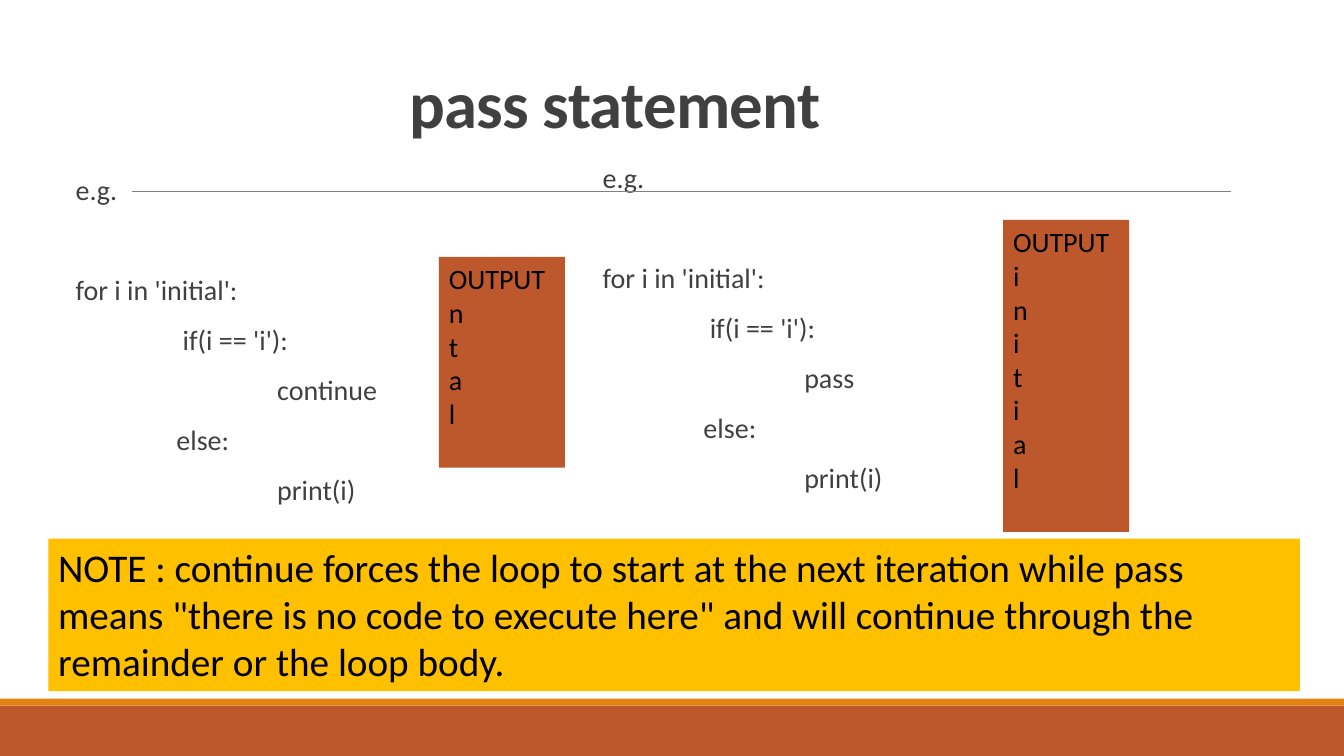
import dataclasses
import typing

import lxml.etree
import pptx
import pptx.dml.color
import pptx.enum.shapes
import pptx.enum.text
import pptx.oxml.ns
import pptx.util

Pt = pptx.util.Pt
FONT = "Calibri"
TAB = 72
COLORS = {
    "rust": "BD582C",
    "orange": "E48312",
    "amber": "FFC000",
    "rule": "808080",
    "heading": "404040",
    "black": "000000",
}


@dataclasses.dataclass(frozen=True)
class Frame:
    left: float
    top: float
    width: float
    height: float


@dataclasses.dataclass(frozen=True)
class Panel:
    frame: Frame
    color: str
    lines: tuple[str, ...] = ()
    size: float = 20


@dataclasses.dataclass(frozen=True)
class Example:
    placeholder: int
    frame: Frame
    action: str


PANELS = (
    Panel(Frame(0, 504, 960, 36), "rust"),
    Panel(Frame(0, 499, 960, 5), "orange"),
    Panel(Frame(313.5, 183.5, 90, 150.5), "rust", ("OUTPUT", *"ntal")),
    Panel(Frame(716.5, 157, 90, 223), "rust", ("OUTPUT", *"initial")),
    Panel(
        Frame(34.5, 384.75, 894, 109),
        "amber",
        (
            "NOTE : continue forces the loop to start at the next iteration while pass "
            'means "there is no code to execute here" and will continue through the '
            "remainder or the loop body.",
        ),
        28,
    ),
)
EXAMPLES = (
    Example(1, Frame(54, 122.5, 332, 258), "continue"),
    Example(2, Frame(430.5, 114, 332, 258), "pass"),
)


def rgb(name: str) -> pptx.dml.color.RGBColor:
    return pptx.dml.color.RGBColor.from_string(COLORS[name])


def place(shape: typing.Any, frame: Frame) -> None:
    shape.left, shape.top = Pt(frame.left), Pt(frame.top)
    shape.width, shape.height = Pt(frame.width), Pt(frame.height)


def style(para: typing.Any, size: float, color: str, bold: bool = False) -> None:
    para.alignment = pptx.enum.text.PP_ALIGN.LEFT
    para.font.name = FONT
    para.font.size = Pt(size)
    para.font.bold = bold
    para.font.color.rgb = rgb(color)


def indent(para: typing.Any, amount: float) -> None:
    properties = para._p.get_or_add_pPr()
    properties.set("marL", str(Pt(amount)))
    properties.set("indent", "0")
    lxml.etree.SubElement(properties, pptx.oxml.ns.qn("a:buNone"))


def prepare(shape: typing.Any, anchor: typing.Any) -> typing.Any:
    text = shape.text_frame
    text.word_wrap = True
    text.auto_size = pptx.enum.text.MSO_AUTO_SIZE.NONE
    text.vertical_anchor = anchor
    return text


def add_title(page: typing.Any) -> None:
    title = page.shapes.title
    place(title, Frame(69, 62, 828, 43))
    text = prepare(title, pptx.enum.text.MSO_ANCHOR.BOTTOM)
    text.text = "pass statement"
    para = text.paragraphs[0]
    indent(para, 3 * TAB)
    para.line_spacing = 0.85
    style(para, 47.7, "heading", bold=True)
    para._p.pPr.find(pptx.oxml.ns.qn("a:defRPr")).set("spc", "-50")


def add_example(page: typing.Any, example: Example) -> None:
    box = page.placeholders[example.placeholder]
    place(box, example.frame)
    text = prepare(box, pptx.enum.text.MSO_ANCHOR.TOP)
    text.margin_left = text.margin_right = 0
    code = (
        ("e.g.", 0, 12),
        ("for i in 'initial':", 0, 47.75),
        ("if(i == 'i'):", TAB + 4.5, 12),
        (example.action, 2 * TAB, 12),
        ("else:", TAB, 12),
        ("print(i)", 2 * TAB, 12),
    )
    text.text = "\n".join(line for line, _, _ in code)
    for para, (_, left, before) in zip(text.paragraphs, code):
        indent(para, left)
        para.line_spacing = 0.9
        para.space_before = Pt(before)
        para.space_after = Pt(2)
        style(para, 20, "heading")


def add_panel(page: typing.Any, panel: Panel) -> None:
    box = page.shapes.add_shape(pptx.enum.shapes.MSO_SHAPE.RECTANGLE, 0, 0, 0, 0)
    place(box, panel.frame)
    box.shadow.inherit = False
    box.fill.solid()
    box.fill.fore_color.rgb = rgb(panel.color)
    box.line.fill.background()
    if panel.lines:
        text = prepare(box, pptx.enum.text.MSO_ANCHOR.TOP)
        text.text = "\n".join(panel.lines)
        for para in text.paragraphs:
            style(para, panel.size, "black")


def add_rule(page: typing.Any) -> None:
    rule = page.shapes.add_connector(
        pptx.enum.shapes.MSO_CONNECTOR.STRAIGHT, Pt(94.5), Pt(136.75), Pt(879), Pt(136.75)
    )
    rule.line.color.rgb = rgb("rule")
    rule.line.width = Pt(0.5)
    lxml.etree.SubElement(rule._element.spPr, pptx.oxml.ns.qn("a:effectLst"))


def main() -> None:
    deck = pptx.Presentation()
    deck.slide_width, deck.slide_height = Pt(960), Pt(540)
    page = deck.slides.add_slide(deck.slide_layouts.get_by_name("Two Content"))
    add_rule(page)
    add_title(page)
    for example in EXAMPLES:
        add_example(page, example)
    for panel in PANELS:
        add_panel(page, panel)
    deck.save("out.pptx")


if __name__ == "__main__":
    main()
